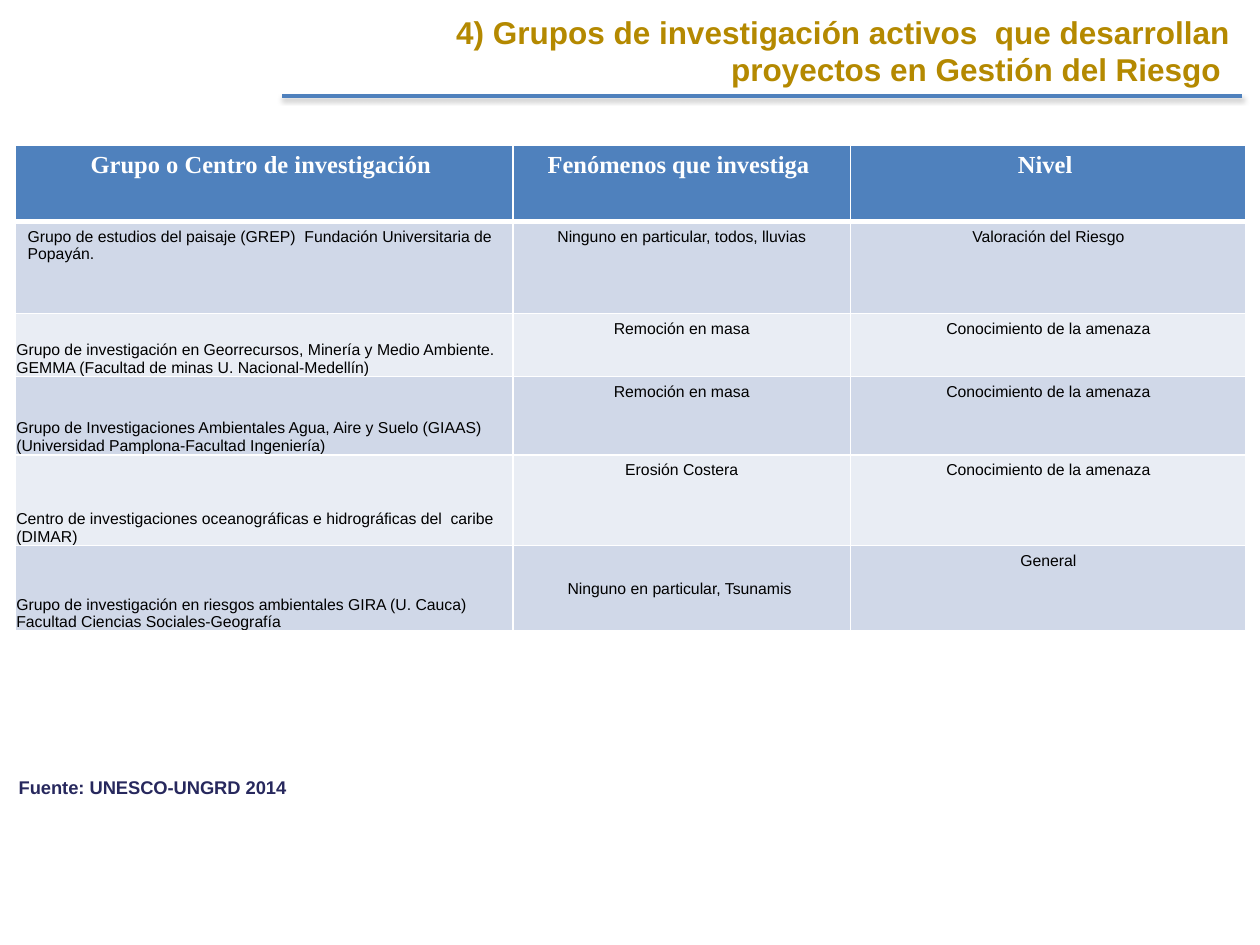
from lxml import etree
from pptx import Presentation
from pptx.dml.color import RGBColor
from pptx.enum.shapes import MSO_CONNECTOR
from pptx.enum.text import MSO_ANCHOR, MSO_AUTO_SIZE, PP_ALIGN
from pptx.oxml.ns import qn
from pptx.util import Inches, Pt

LEFT, CENTER, RIGHT = PP_ALIGN.LEFT, PP_ALIGN.CENTER, PP_ALIGN.RIGHT
TOP, MIDDLE, BOTTOM = MSO_ANCHOR.TOP, MSO_ANCHOR.MIDDLE, MSO_ANCHOR.BOTTOM
STRAIGHT = MSO_CONNECTOR.STRAIGHT
GROW = MSO_AUTO_SIZE.SHAPE_TO_FIT_TEXT

BLUE, WHITE = "4F81BD", "FFFFFF"
BANDS = ["D0D8E8", "E9EDF4"]

TITLE_FONT = {"name": "Arial", "size": Pt(18), "bold": True, "color": "B48900"}
SOURCE_FONT = {"name": "Arial", "size": Pt(10.5), "bold": True, "color": "27285D"}
HEADER_FONT = {"name": "Times New Roman", "size": Pt(14), "bold": True, "color": WHITE}
BODY_FONT = {"name": "Arial", "size": Pt(9), "bold": False, "color": "000000"}

COLUMN_WIDTHS = [3.95, 2.68, 3.14]
ROW_HEIGHTS = [0.61, 0.73, 0.5, 0.62, 0.72, 0.68]
ROWS = [
    ["Grupo o Centro de investigación ", "Fenómenos que investiga ", "Nivel "],
    ["Grupo de estudios del paisaje (GREP)  Fundación Universitaria de Popayán.",
     "Ninguno en particular, todos, lluvias", "Valoración del Riesgo"],
    ["Grupo de investigación en Georrecursos, Minería y Medio Ambiente. "
     "GEMMA (Facultad de minas U. Nacional-Medellín)",
     "Remoción en masa", "Conocimiento de la amenaza"],
    ["Grupo de Investigaciones Ambientales Agua, Aire y Suelo (GIAAS) "
     "(Universidad Pamplona-Facultad Ingeniería)",
     "Remoción en masa", "Conocimiento de la amenaza"],
    ["Centro de investigaciones oceanográficas e hidrográficas del  caribe (DIMAR)",
     "Erosión Costera", "Conocimiento de la amenaza"],
    ["Grupo de investigación en riesgos ambientales GIRA (U. Cauca) "
     "Facultad Ciencias Sociales-Geografía",
     "Ninguno en particular, Tsunamis ", "General"],
]
# Cells with narrow margins, by (row, column)
TIGHT_ANCHORS = {(row, 0): BOTTOM for row in range(2, 6)} | {(5, 1): MIDDLE}


def rgb(value):
    return RGBColor.from_string(value)


def write_text(frame, text, font_format, align):
    para = frame.paragraphs[0]
    para.alignment = align
    span = para.add_run()
    span.text = text
    for name, value in font_format.items():
        if name == "color":
            span.font.color.rgb = rgb(value)
        else:
            setattr(span.font, name, value)


def add_text(page, bounds, text, font_format, align, wrap):
    box = page.shapes.add_textbox(*map(Inches, bounds))
    box.text_frame.word_wrap = wrap
    box.text_frame.auto_size = GROW
    write_text(box.text_frame, text, font_format, align)


def add_color(parent, value):
    return etree.SubElement(parent, qn("a:srgbClr"), val=value)


def set_borders(cell, widths):
    properties = cell._tc.get_or_add_tcPr()
    for index, (side, width) in enumerate(widths.items()):
        border = etree.Element(qn(f"a:ln{side}"), w=str(Pt(width)))
        add_color(etree.SubElement(border, qn("a:solidFill")), WHITE)
        properties.insert(index, border)


def format_cell(cell, row, column):
    header = row == 0
    cell.fill.solid()
    cell.fill.fore_color.rgb = rgb(BLUE if header else BANDS[(row - 1) % 2])
    cell.vertical_anchor = TIGHT_ANCHORS.get((row, column), TOP)
    if (row, column) in TIGHT_ANCHORS:
        cell.margin_left = cell.margin_top = cell.margin_right = Inches(0.01)
        cell.margin_bottom = 0
    set_borders(cell, {"L": 1, "R": 1, "T": 3 if row == 1 else 1, "B": 3 if header else 1})
    align = CENTER if header or column > 0 else LEFT
    write_text(cell.text_frame, ROWS[row][column], HEADER_FONT if header else BODY_FONT, align)


def add_groups_table(page):
    bounds = (0.12, 1.15, sum(COLUMN_WIDTHS), sum(ROW_HEIGHTS))
    table = page.shapes.add_table(len(ROWS), len(COLUMN_WIDTHS), *map(Inches, bounds)).table
    for column, width in zip(table.columns, COLUMN_WIDTHS):
        column.width = Inches(width)
    for row, height in zip(table.rows, ROW_HEIGHTS):
        row.height = Inches(height)
    for row, texts in enumerate(ROWS):
        for column in range(len(texts)):
            format_cell(table.cell(row, column), row, column)


def add_title_rule(page):
    rule = page.shapes.add_connector(STRAIGHT, *map(Inches, (9.86, 0.76, 2.24, 0.76)))
    rule.line.color.rgb = rgb(BLUE)
    rule.line.width = Pt(2)
    # Soft shadow straight below the rule
    effects = etree.SubElement(rule._element.spPr, qn("a:effectLst"))
    shadow = etree.SubElement(effects, qn("a:outerShdw"), blurRad=str(Pt(3.1)),
                              dist=str(Pt(1.6)), dir="5400000", rotWithShape="0")
    etree.SubElement(add_color(shadow, "000000"), qn("a:alpha"), val="38000")


def main():
    deck = Presentation()
    deck.slide_width, deck.slide_height = Inches(10), Inches(7.5)
    page = deck.slides.add_slide(deck.slide_layouts[6])

    # Research groups and source
    add_groups_table(page)
    add_text(page, (0.05, 6.11, 2.41, 0.28), "Fuente: UNESCO-UNGRD 2014",
             SOURCE_FONT, LEFT, False)

    # Title and rule
    add_text(page, (2.46, 0.05, 7.4, 0.71),
             "4) Grupos de investigación activos  que desarrollan "
             "proyectos en Gestión del Riesgo ", TITLE_FONT, RIGHT, True)
    add_title_rule(page)

    deck.save("out.pptx")


if __name__ == "__main__":
    main()
